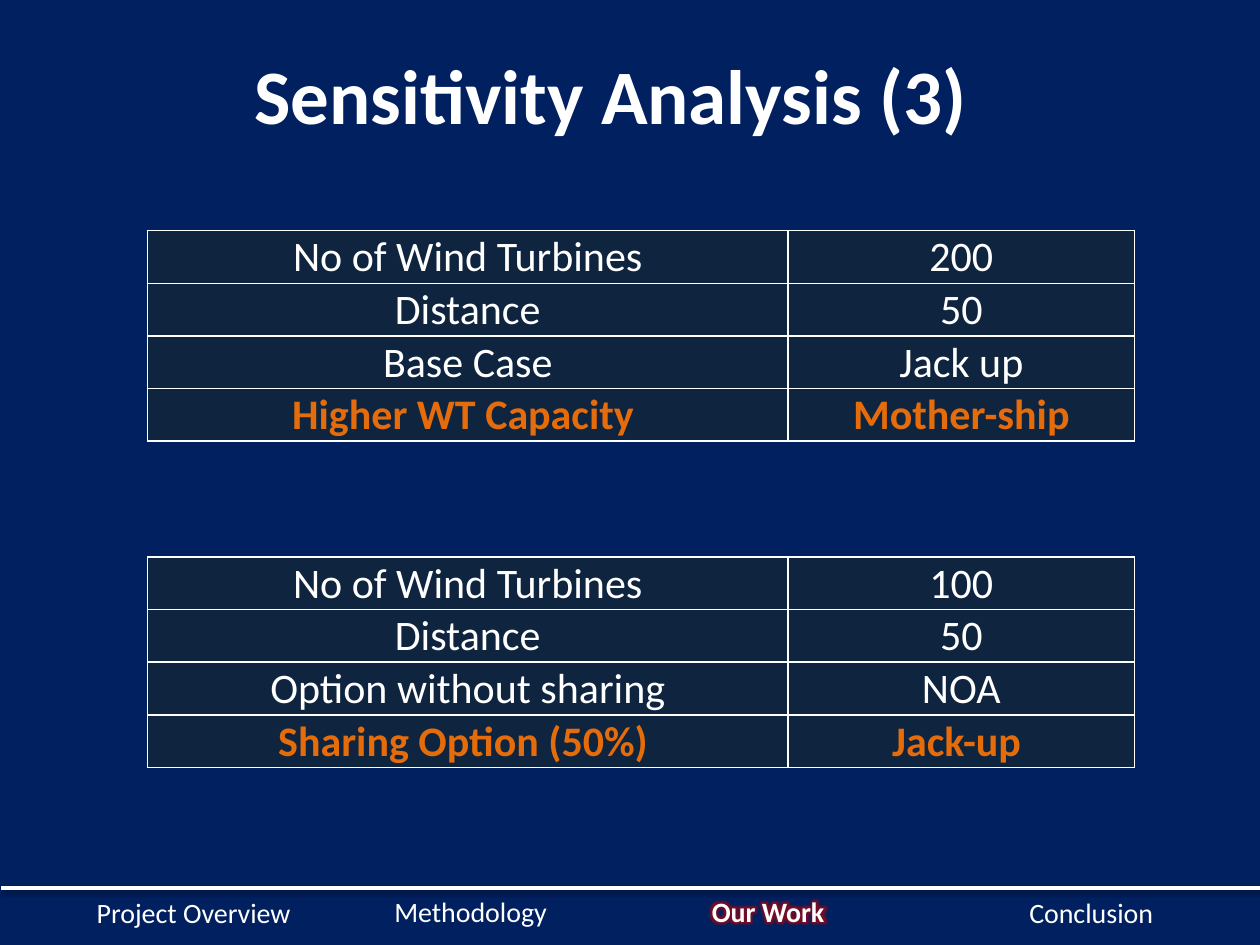
from lxml.etree import fromstring
from pptx import Presentation
from pptx.dml.color import RGBColor
from pptx.enum.shapes import MSO_CONNECTOR
from pptx.enum.text import MSO_ANCHOR, PP_ALIGN
from pptx.oxml.ns import qn
from pptx.util import Cm, Pt

# Content
TITLE = "Sensitivity Analysis (3)"
TABLES = [
    (4.65, [("No of Wind Turbines", "200"), ("Distance", "50"),
            ("Base Case", "Jack up"), ("Higher WT Capacity ", "Mother-ship")]),
    (11.23, [("No of Wind Turbines", "100"), ("Distance", "50"),
             ("Option without sharing", "NOA"), ("Sharing Option (50%) ", "Jack-up ")]),
]
SECTIONS = [("Project Overview", 1.7, 17.93), ("Methodology", 7.7, 17.9),
            ("Our Work", 14.1, 17.9), ("Conclusion", 20.5, 17.93)]
CURRENT = "Our Work"

# Format
COLORS = {"bg": "002060", "text": "FFFFFF", "cell": "0F243E",
          "accent": "E46C0A", "glow": "C00000", "shadow": "000000"}
TABLE_LEFT, COL_WIDTHS, ROW_HEIGHT = 2.97, (12.92, 6.98), 1.06
NS = 'xmlns:a="http://schemas.openxmlformats.org/drawingml/2006/main"'
GLOW = (f'<a:effectLst {NS}><a:glow rad="101600"><a:srgbClr val="{COLORS["glow"]}">'
        '<a:alpha val="60000"/></a:srgbClr></a:glow></a:effectLst>')
SHADOW = (f'<a:effectLst {NS}><a:outerShdw blurRad="40000" dist="20000" dir="5400000" '
          f'rotWithShape="0"><a:srgbClr val="{COLORS["shadow"]}"><a:alpha val="38000"/>'
          '</a:srgbClr></a:outerShdw></a:effectLst>')


def rgb(name):
    return RGBColor.from_string(COLORS[name])


def write(tf, text, size, color="text", bold=False, align=PP_ALIGN.LEFT):
    p = tf.paragraphs[0]
    p.alignment = align
    r = p.add_run()
    r.text = text
    for key, value in {"name": "Calibri", "size": Pt(size), "bold": bold}.items():
        setattr(r.font, key, value)
    r.font.color.rgb = rgb(color)
    return r


def format_cell(cell):
    margins = {"margin_left": 0.02, "margin_right": 0.02, "margin_top": 0.02, "margin_bottom": 0}
    for key, value in margins.items():
        setattr(cell, key, Cm(value))
    cell.vertical_anchor = MSO_ANCHOR.BOTTOM
    pr = cell._tc.get_or_add_tcPr()
    for side in "LRTB":
        pr.append(fromstring(f'<a:ln{side} {NS} w="12700"><a:solidFill>'
                             f'<a:srgbClr val="{COLORS["text"]}"/></a:solidFill></a:ln{side}>'))
    cell.fill.solid()
    cell.fill.fore_color.rgb = rgb("cell")


def add_result_table(s, top, rows):
    table = s.shapes.add_table(len(rows), len(COL_WIDTHS), Cm(TABLE_LEFT), Cm(top),
                               Cm(sum(COL_WIDTHS)), Cm(ROW_HEIGHT * len(rows))).table
    table.first_row = table.horz_banding = False
    for col, width in zip(table.columns, COL_WIDTHS):
        col.width = Cm(width)
    for i, row in enumerate(rows):
        last = i == len(rows) - 1
        for j, text in enumerate(row):
            cell = table.cell(i, j)
            format_cell(cell)
            write(cell.text_frame, text, 24, "accent" if last else "text", last, PP_ALIGN.CENTER)


prs = Presentation()
prs.slide_width, prs.slide_height = Cm(25.4), Cm(19.05)
s = prs.slides.add_slide(prs.slide_layouts[5])
s.background.fill.solid()
s.background.fill.fore_color.rgb = rgb("bg")

# Footer navigation
for text, left, top in SECTIONS:
    tf = s.shapes.add_textbox(Cm(left), Cm(top), Cm(5.59), Cm(0.94)).text_frame
    tf.word_wrap = True
    r = write(tf, text, 16, bold=text == CURRENT)
    if text == CURRENT:
        r.font._element.find(qn("a:solidFill")).addnext(fromstring(GLOW))

# Footer rule
rule = s.shapes.add_connector(MSO_CONNECTOR.STRAIGHT, Cm(0.03), Cm(17.9), Cm(25.43), Cm(17.9))
rule.line.color.rgb = rgb("text")
rule.line.width = Pt(2)
rule._element.spPr.append(fromstring(SHADOW))

# Result tables
for top, rows in TABLES:
    add_result_table(s, top, rows)

# Title
title = s.shapes.title
for key, value in {"left": 0.89, "top": 0.3, "width": 22.86, "height": 3.18}.items():
    setattr(title, key, Cm(value))
title.text_frame.vertical_anchor = MSO_ANCHOR.MIDDLE
write(title.text_frame, TITLE, 44, bold=True, align=PP_ALIGN.CENTER)

prs.save("out.pptx")
